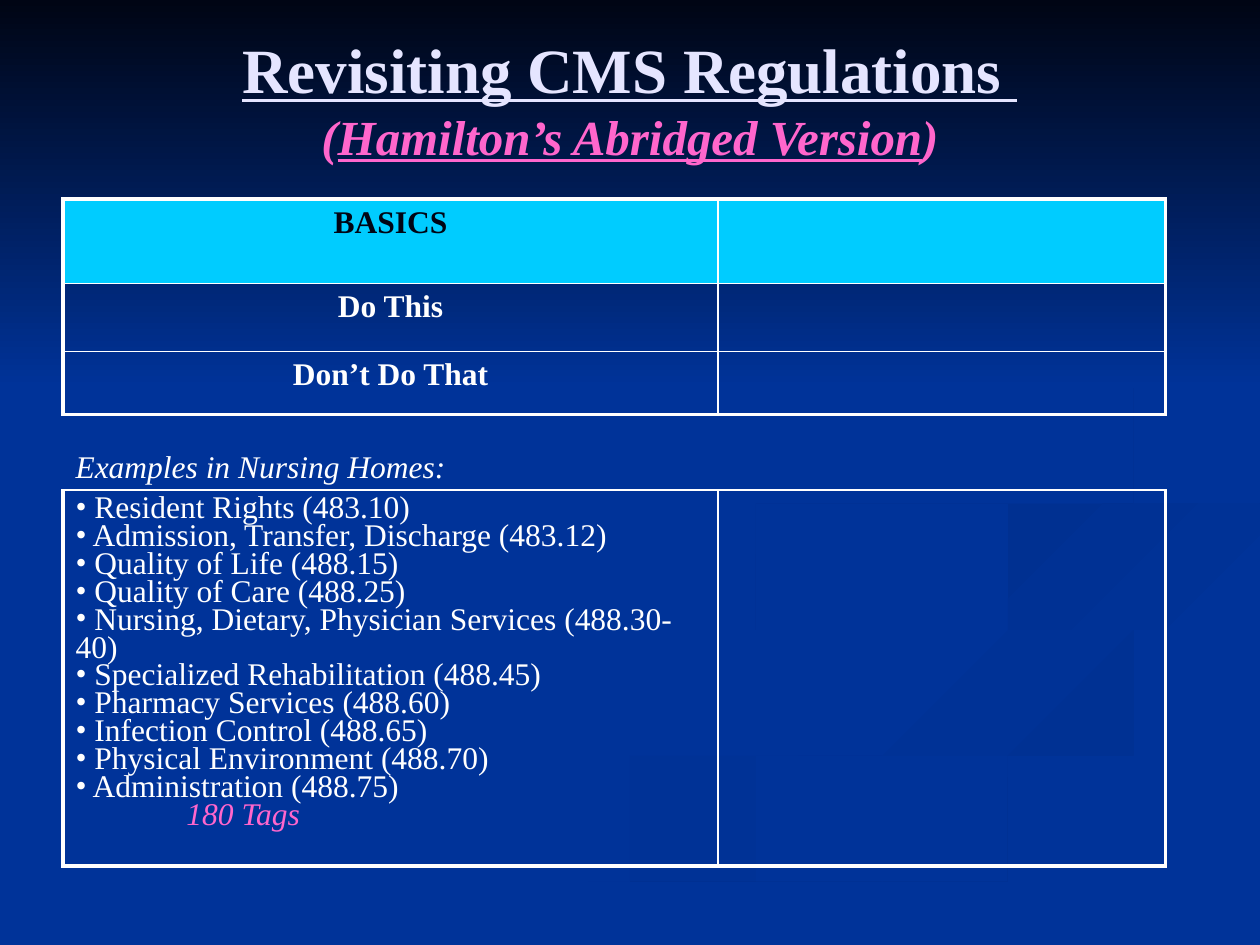
import math
import pptx
import pptx.util
import pptx.dml.color
import pptx.enum.shapes
import pptx.enum.text
import pptx.oxml
import pptx.oxml.ns

Inches, Pt = pptx.util.Inches, pptx.util.Pt
FONT = "Times New Roman"
WHITE, PINK, CYAN, NIGHT, BLUE = "FFFFFF", "FF66CC", "00CCFF", "000514", "003399"
STEPS = 8  # curve points between two knots
SPACE = pptx.oxml.ns.nsdecls("a")


def color(code):
    return pptx.dml.color.RGBColor.from_string(code)


def outline(knots):
    """Outline of a band whose smooth spine passes through (x, y, width) knots."""
    ends = [knots[0], *knots, knots[-1]]
    spine = []
    for a, b, c, d in zip(ends, ends[1:], ends[2:], ends[3:]):
        for step in range(STEPS):
            t = step / STEPS
            # Catmull-Rom curve from b to c, for x, y and width alike
            spine.append([
                q + t / 2 * (r - p + t * (2 * p - 5 * q + 4 * r - s + t * (3 * (q - r) + s - p)))
                for p, q, r, s in zip(a, b, c, d)
            ])
    spine.append(knots[-1])
    left, right = [], []
    for i, (x, y, width) in enumerate(spine):
        back, ahead = spine[max(i - 1, 0)], spine[min(i + 1, len(spine) - 1)]
        angle = math.atan2(ahead[1] - back[1], ahead[0] - back[0])
        dx, dy = -math.sin(angle) * width / 2, math.cos(angle) * width / 2
        left.append((x + dx, y + dy))
        right.append((x - dx, y - dy))
    return left + right[::-1]


deck = pptx.Presentation()
deck.slide_width, deck.slide_height = Inches(10), Inches(7.5)
slide = deck.slides.add_slide(deck.slide_layouts[6])
slide.background.fill.solid()
slide.background.fill.fore_color.rgb = color(BLUE)

# Background ribbons: two colours, gradient angle, spine knots in inches
near_loop = [(5.74, 4.6, 0.02), (5.75, 4.76, 0.04), (6.3, 5.06, 0.03), (7.2, 5.34, 0.03),
             (7.8, 5.56, 0.06), (7.92, 5.79, 0.15), (6.8, 6.24, 0.18), (5.8, 6.5, 0.22),
             (4.62, 6.87, 0.27), (3.3, 7.36, 0.25)]
far_loop = [(7.24, 4.64, 0.01), (7.42, 4.93, 0.05), (8.2, 5.28, 0.05), (8.95, 5.48, 0.14),
            (9.3, 5.75, 0.25), (8.95, 6.05, 0.02)]
stream = [(9.95, 5.95, 0.28), (9, 6.2, 0.2), (8, 6.47, 0.2), (6.8, 6.86, 0.22),
          (5.8, 7.28, 0.25), (5.4, 7.4, 0.15)]
light = [(9.97, 3.95, 0.14), (8.9, 4.13, 0.1), (7.9, 4.34, 0.24), (7.53, 4.64, 0.5),
         (8.2, 5.06, 0.26), (9, 5.28, 0.2), (9.7, 5.65, 0.5), (9.3, 5.97, 0.14),
         (8.3, 6.25, 0.1), (7, 6.62, 0.12), (6, 6.98, 0.14), (4.95, 7.42, 0.1)]
hook = [(9.95, 4.11, 0.18), (8.98, 4.26, 0.16), (8.2, 4.46, 0.18), (7.93, 4.7, 0.24),
        (8.23, 4.95, 0.01)]
curl = [(7.62, 2.33, 0.01), (8.4, 2.74, 0.04), (8.87, 3.12, 0.05), (8.9, 3.42, 0.07),
        (8.6, 3.78, 0.16), (7.85, 4.03, 0.2), (6.8, 4.22, 0.16), (6.1, 4.4, 0.16),
        (5.85, 4.63, 0.16), (6.2, 4.98, 0.01)]
layers = []
for first, last, angle, knots in [
    (BLUE, "003193", 0, near_loop),
    (BLUE, "003193", 45, far_loop),
    ("002F8C", BLUE, 90, stream),
    (BLUE, BLUE, 0, light),
    ("003091", BLUE, 45, hook),
    ("002F8E", BLUE, 45, curl),
]:
    points = outline(knots)
    build = slide.shapes.build_freeform(*points[0], scale=Inches(1))
    build.add_line_segments(points[1:], close=True)
    layers.append((build.convert_to_shape(), first, last, angle))

# Dark sky across the top
sky = slide.shapes.add_shape(pptx.enum.shapes.MSO_SHAPE.RECTANGLE, 0, 0, Inches(10), Inches(3.08))
layers.append((sky, NIGHT, BLUE, 90))

# Gradients, which python-pptx turns counter-clockwise
for shape, first, last, angle in layers:
    shape.shadow.inherit = False
    shape.line.fill.background()
    shape.fill.gradient()
    shape.fill.gradient_angle = -angle % 360
    for stop, code in zip(shape.fill.gradient_stops, (first, last)):
        stop.color.rgb = color(code)

# Title
title = slide.shapes.add_textbox(Inches(0.5), Inches(0.3), Inches(9), Inches(0.95))
frame = title.text_frame
frame.word_wrap = True
frame.vertical_anchor = pptx.enum.text.MSO_ANCHOR.MIDDLE
para = frame.paragraphs[0]
para.alignment = pptx.enum.text.PP_ALIGN.CENTER
para.font.name, para.font.bold = FONT, True
for text, size, code, under in [
    ("Revisiting CMS Regulations ", 36, "E5E5FF", True),
    ("(", 28, PINK, False),
    ("Hamilton’s Abridged Version", 28, PINK, True),
    (")", 28, PINK, False),
]:
    run = para.add_run()
    run.text = text
    run.font.size, run.font.underline = Pt(size), under
    run.font.color.rgb = color(code)
    run.font.italic = code == PINK
    if size == 36:
        para.add_line_break()

# Table grid
rows = [0.67, 0.54, 0.5, 0.6, 2.76]
cols = [5.2, 3.55]
table = slide.shapes.add_table(
    len(rows), len(cols), Inches(0.5), Inches(1.58), Inches(sum(cols)), Inches(sum(rows))
).table
table.first_row = table.horz_banding = False
for row, height in zip(table.rows, rows):
    row.height = Inches(height)
for col, width in zip(table.columns, cols):
    col.width = Inches(width)

# Table text
heads = ["BASICS", "Do This", "Don’t Do That"]
label = "Examples in Nursing Homes:"
rights = [
    "Resident Rights (483.10)",
    "Admission, Transfer, Discharge (483.12)",
    "Quality of Life (488.15)",
    "Quality of Care (488.25)",
    "Nursing, Dietary, Physician Services (488.30-40)",
    "Specialized Rehabilitation (488.45)",
    "Pharmacy Services (488.60)",
    "Infection Control (488.65)",
    "Physical Environment (488.70)",
    "Administration (488.75)",
]
total = "180 Tags"
items = "\n".join([" " + right for right in rights] + [total])
for index, text in enumerate(heads + [label, items]):
    cell = table.cell(index, 0)
    cell.text = text
    for para in cell.text_frame.paragraphs:
        font = para.font
        font.name, font.size = FONT, Pt(18)
        font.color.rgb = color(NIGHT if index == 0 else PINK if para.text == total else WHITE)
        font.bold = text in heads
        font.italic = para.text in (label, total)
        if text in heads:
            para.alignment = pptx.enum.text.PP_ALIGN.CENTER
            continue
        para.line_spacing = 0.8
        props = para._p.get_or_add_pPr()
        props.set("marL", str(Inches(0.88 if para.text == total else 0)))
        props.set("indent", "0")
        if text == items and para.text != total:
            for mark in (f'<a:buFont {SPACE} typeface="{FONT}"/>', f'<a:buChar {SPACE} char="•"/>'):
                props.insert_element_before(
                    pptx.oxml.parse_xml(mark), "a:tabLst", "a:defRPr", "a:extLst")
table.cell(3, 0).margin_top, table.cell(3, 0).margin_bottom = Inches(0.33), 0
table.cell(3, 0).merge(table.cell(3, 1))

# Cell fills and borders: thick round each block, thin inside, open sides on the label row
for r in range(len(rows)):
    for c in range(len(cols)):
        cell = table.cell(r, c)
        if r == 0:
            cell.fill.solid()
            cell.fill.fore_color.rgb = color(CYAN)
        else:
            cell.fill.background()
        sides = {
            "L": 0 if r == 3 else 2.25 if c == 0 else 1,
            "R": 0 if r == 3 else 2.25 if c == 1 else 1,
            "T": 2.25 if r in (0, 3) else 1,
            "B": 2.25 if r in (2, 4) else 1,
        }
        for place, (side, weight) in enumerate(sides.items()):
            ink = f'<a:solidFill><a:srgbClr val="{WHITE}"/></a:solidFill>' if weight else "<a:noFill/>"
            edge = f'<a:ln{side} {SPACE} w="{Pt(weight)}">{ink}</a:ln{side}>'
            cell._tc.get_or_add_tcPr().insert(place, pptx.oxml.parse_xml(edge))

deck.save("out.pptx")
